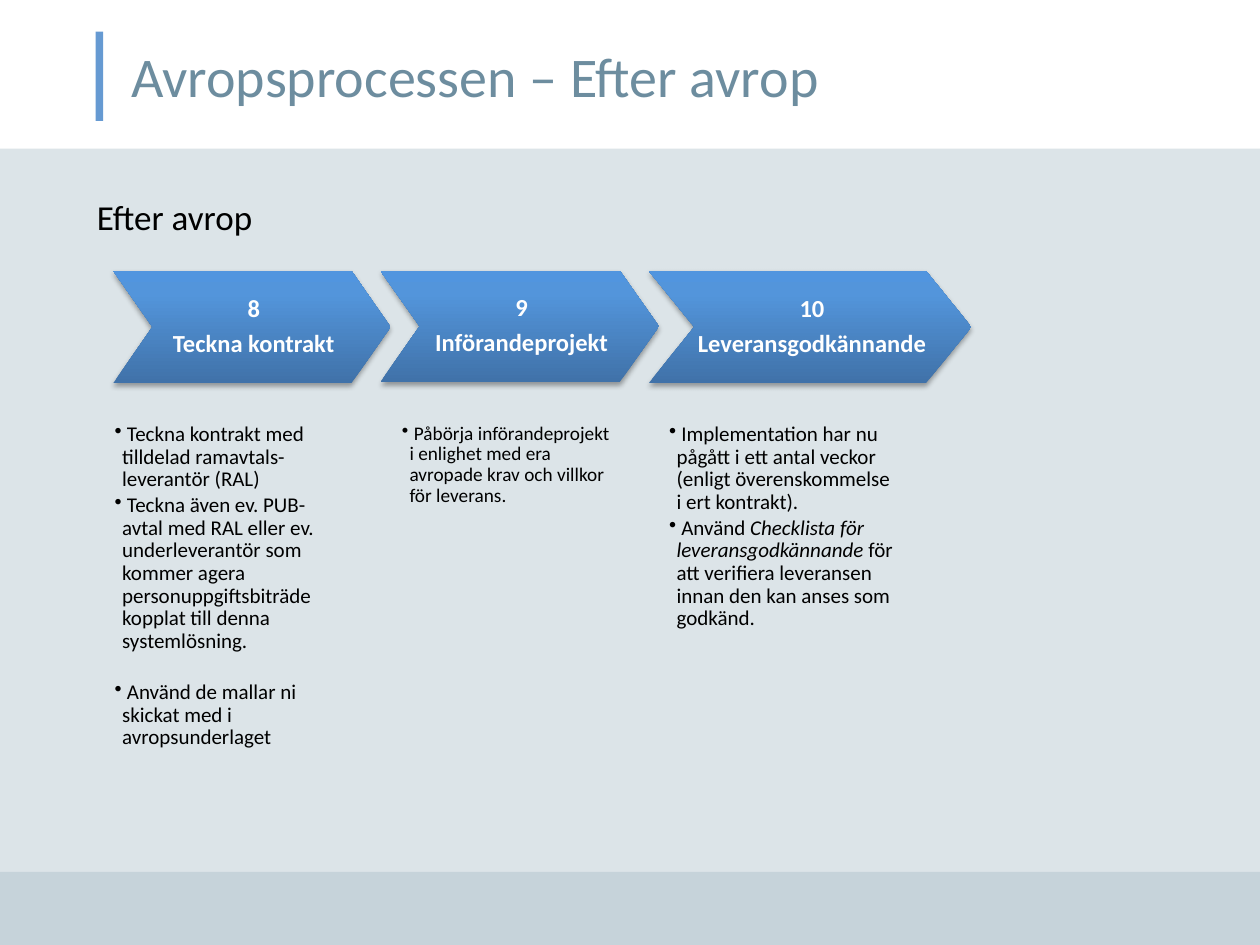
import lxml.etree
import pptx
import pptx.dml.color
import pptx.enum.shapes
import pptx.enum.text
import pptx.oxml.ns
import pptx.util

Inches = pptx.util.Inches
Pt = pptx.util.Pt
Align = pptx.enum.text.PP_ALIGN
Anchor = pptx.enum.text.MSO_ANCHOR
Preset = pptx.enum.shapes.MSO_SHAPE

STEP_GRADIENT = [(0, "4072A9"), (80, "5395DB"), (100, "5195DF")]
STEP_TOP = 2.15
NOTES_TOP = 3.36
NOTES_HEIGHT = 3.39

STEPS = [
    {"number": "8", "name": "Teckna kontrakt", "left": 0.9, "width": 2.2, "height": 0.89, "tip": 0.31},
    {"number": "9", "name": "Införandeprojekt", "left": 3.02, "width": 2.21, "height": 0.88, "tip": 0.31},
    {"number": "10", "name": "Leveransgodkännande", "left": 5.15, "width": 2.56, "height": 0.89, "tip": 0.36},
]

NOTES = [
    {"left": 0.91, "width": 1.81, "size": 12, "gaps": {2: 14.3}, "paragraphs": [
        " Teckna kontrakt med tilldelad ramavtals-leverantör (RAL)",
        " Teckna även ev. PUB-avtal med RAL eller ev. underleverantör som kommer agera "
        "personuppgiftsbiträde kopplat till denna systemlösning.",
        " Använd de mallar ni skickat med i avropsunderlaget",
    ]},
    {"left": 3.19, "width": 1.69, "size": 11, "gaps": {}, "paragraphs": [
        " Påbörja införandeprojekt i enlighet med era avropade krav och villkor för leverans.",
    ]},
    {"left": 5.31, "width": 1.81, "size": 12, "gaps": {}, "paragraphs": [
        " Implementation har nu pågått i ett antal veckor (enligt överenskommelse i ert kontrakt).",
        [(" Använd ", False),
         ("Checklista för leveransgodkännande ", True),
         ("för att verifiera leveransen innan den kan anses som godkänd.", False)],
    ]},
]


def color(value):
    """Turn a hex string into a colour."""
    return pptx.dml.color.RGBColor.from_string(value)


def add_element(parent, tag, **attributes):
    """Append a drawing element with the given attributes."""
    element = lxml.etree.SubElement(parent, pptx.oxml.ns.qn(tag))
    for name, value in attributes.items():
        element.set(name, str(value))
    return element


def add_bullet(para):
    """Give a paragraph a narrow hanging bullet."""
    properties = para._p.get_or_add_pPr()
    properties.set("marL", str(Inches(0.06)))
    properties.set("indent", str(-Inches(0.06)))
    add_element(properties, "a:buChar", char="•")


def write_text(shape, paragraphs, size, fill="000000", bold=False, align=Align.LEFT, anchor=Anchor.TOP,
               insets=(0, 0, 0, 0), wrap=True, line=None, after=0, bullets=False, gaps=None):
    """Fill a shape with formatted paragraphs of plain text or (text, italic) spans."""
    frame = shape.text_frame
    frame.word_wrap = wrap
    frame.vertical_anchor = anchor
    frame.margin_left, frame.margin_top, frame.margin_right, frame.margin_bottom = map(Inches, insets)
    for index, content in enumerate(paragraphs):
        para = frame.paragraphs[0] if index == 0 else frame.add_paragraph()
        if bullets:
            add_bullet(para)
        para.alignment = align
        para.line_spacing = line
        para.space_after = Pt(after)
        if gaps and index in gaps:
            para.space_before = Pt(gaps[index])
        spans = [(content, False)] if isinstance(content, str) else content
        for text, italic in spans:
            span = para.add_run()
            span.text = text
            span.font.name = "Calibri"
            span.font.size = Pt(size)
            span.font.bold = bold
            span.font.italic = italic
            span.font.color.rgb = color(fill)


def add_text(page, left, top, width, height, paragraphs, **text_format):
    """Add a text box."""
    box = page.shapes.add_textbox(Inches(left), Inches(top), Inches(width), Inches(height))
    write_text(box, paragraphs, **text_format)


def add_band(page, left, top, width, height, fill, opacity=100):
    """Add a plain filled rectangle."""
    band = page.shapes.add_shape(Preset.RECTANGLE, Inches(left), Inches(top), Inches(width), Inches(height))
    band.shadow.inherit = False
    band.fill.solid()
    band.fill.fore_color.rgb = color(fill)
    band.line.fill.background()
    if opacity < 100:
        tone = band._element.spPr.find(".//" + pptx.oxml.ns.qn("a:srgbClr"))
        add_element(tone, "a:alpha", val=opacity * 1000)


def add_step(page, number, name, left, width, height, tip):
    """Add a chevron with gradient, soft shadow and a numbered label."""
    step = page.shapes.add_shape(
        Preset.CHEVRON, Inches(left), Inches(STEP_TOP), Inches(width), Inches(height))
    step.adjustments[0] = tip / height
    step.line.fill.background()
    step.fill.gradient()
    step.fill.gradient_angle = 90
    properties = step._element.spPr
    stops = properties.find(".//" + pptx.oxml.ns.qn("a:gsLst"))
    for stop in list(stops):
        stops.remove(stop)
    for position, tone in STEP_GRADIENT:
        stop = add_element(stops, "a:gs", pos=position * 1000)
        add_element(stop, "a:srgbClr", val=tone)
    step.shadow.inherit = False
    effects = properties.find(pptx.oxml.ns.qn("a:effectLst"))
    shadow = add_element(effects, "a:outerShdw", blurRad=Pt(3.1), dist=Pt(1.8), dir=90 * 60000, rotWithShape=0)
    add_element(add_element(shadow, "a:srgbClr", val="000000"), "a:alpha", val=35000)
    write_text(step, [number, name], size=14, fill="FFFFFF", bold=True, align=Align.CENTER,
               anchor=Anchor.MIDDLE, insets=(0.03, 0.01, 0, 0.01), wrap=False, line=0.9, after=4.9)


def add_notes(page, left, width, size, gaps, paragraphs):
    """Add the bulleted notes below a step."""
    add_text(page, left, NOTES_TOP, width, NOTES_HEIGHT, paragraphs, size=size,
             line=0.9, after=0.15 * size, bullets=True, gaps=gaps)


def main():
    """Build the slide and save it."""
    deck = pptx.Presentation()
    deck.slide_width, deck.slide_height = Inches(10), Inches(7.5)
    page = deck.slides.add_slide(deck.slide_layouts[6])
    add_band(page, -0.01, 1.18, 10.01, 5.74, "C6D3DA", opacity=60)
    add_band(page, -0.01, 6.92, 10.02, 0.61, "C6D3DA")
    add_band(page, 0.76, 0.25, 0.06, 0.71, "669AD2")
    add_text(page, 0.78, 0.18, 8.45, 0.84, ["Avropsprocessen – Efter avrop"], size=32, fill="6D8D9F",
             anchor=Anchor.MIDDLE, insets=(0.26, 0.04, 0.1, 0.04))
    add_text(page, 0.67, 1.5, 1.49, 0.44, ["Efter avrop"], size=20, insets=(0.1, 0.05, 0.1, 0.05))
    for step, notes in zip(STEPS, NOTES):
        add_step(page, **step)
        add_notes(page, **notes)
    deck.save("out.pptx")


if __name__ == "__main__":
    main()
